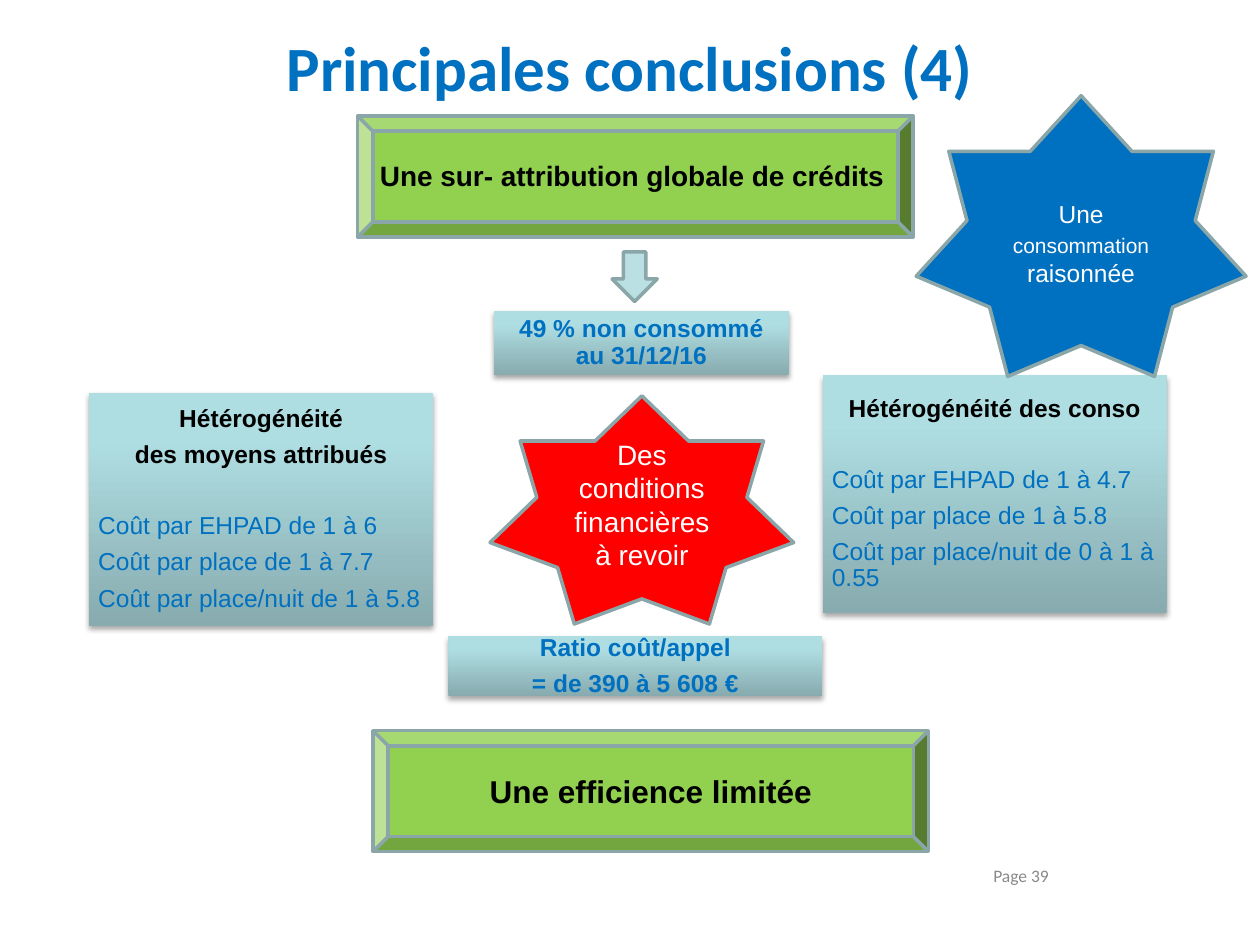
from lxml import etree
from pptx import Presentation
from pptx.dml.color import RGBColor
from pptx.enum.shapes import MSO_SHAPE
from pptx.enum.text import MSO_ANCHOR, PP_ALIGN
from pptx.oxml.ns import qn
from pptx.util import Cm, Pt

BEVEL, STAR = MSO_SHAPE.BEVEL, MSO_SHAPE.STAR_7_POINT
ARROW, RECT = MSO_SHAPE.DOWN_ARROW, MSO_SHAPE.RECTANGLE
LEFT, CENTER, RIGHT = PP_ALIGN.LEFT, PP_ALIGN.CENTER, PP_ALIGN.RIGHT
MIDDLE = MSO_ANCHOR.MIDDLE

COLORS = {
    "blue": "0070C0", "green": "92D050", "red": "FF0000", "teal": "BBE0E3",
    "outline": "8AA6A8", "card_dark": "87ABAE", "card_light": "AFDEE2",
    "black": "000000", "white": "FFFFFF", "grey": "898989",
}


def rgb(name):
    return RGBColor.from_string(COLORS[name])


class SlideBuilder:
    font = "Arial"
    inset = 0.18
    gap = 5.5  # points after each line of a card

    def __init__(self, prs):
        self.slide = prs.slides.add_slide(prs.slide_layouts[5])

    def style(self, p, size, color, bold=False, align=CENTER, font=None):
        p.alignment = align
        f = p.font
        f.name, f.size, f.bold = font or self.font, Pt(size), bold
        f.color.rgb = rgb(color)

    def tighten(self, p, after):
        p.line_spacing = 0.9
        p.space_after = Pt(after)

    def set_insets(self, tf, left=None):
        tf.margin_left = Cm(left or self.inset)
        tf.margin_right = tf.margin_top = tf.margin_bottom = Cm(self.inset)

    def title(self, text, box):
        sp = self.slide.shapes.title
        sp.left, sp.top, sp.width, sp.height = map(Cm, box)
        tf = sp.text_frame
        tf.text = text
        tf.vertical_anchor = MIDDLE
        self.style(tf.paragraphs[0], 36, "blue", True, font="Calibri")

    def shape(self, kind, box, fill, text="", size=16, color="black", bold=False):
        sp = self.slide.shapes.add_shape(kind, *map(Cm, box))
        sp.shadow.inherit = False
        sp.fill.solid()
        sp.fill.fore_color.rgb = rgb(fill)
        sp.line.color.rgb = rgb("outline")
        sp.line.width = Pt(2)
        tf = sp.text_frame
        tf.word_wrap = True
        tf.vertical_anchor = MIDDLE
        if text:
            tf.text = text
            self.style(tf.paragraphs[0], size, color, bold)
        return sp

    def label(self, text, box, size, color, bold=False, align=LEFT, font=None):
        sp = self.slide.shapes.add_textbox(*map(Cm, box))
        tf = sp.text_frame
        tf.word_wrap = True
        tf.text = text
        self.style(tf.paragraphs[0], size, color, bold, align, font)
        return tf

    def card(self, box, heading, details=(), color="black"):
        sp = self.slide.shapes.add_shape(RECT, *map(Cm, box))
        sp.line.fill.background()
        # Vertical gradient, dark at the bottom
        sp.fill.gradient()
        sp.fill.gradient_angle = 90
        stops = zip(sp.fill.gradient_stops, ((0, "card_dark"), (0.8, "card_light")))
        for stop, (position, name) in stops:
            stop.position = position
            stop.color.rgb = rgb(name)
        self.drop_shadow(sp)

        tf = sp.text_frame
        tf.word_wrap = True
        tf.vertical_anchor = MIDDLE
        self.set_insets(tf)
        tf.text = "\n".join([*heading, *details])
        for i, p in enumerate(tf.paragraphs):
            if i < len(heading):
                self.style(p, 14, color, True)
            else:
                self.style(p, 14, "blue", align=LEFT)
            ends_heading = details and i == len(heading) - 1
            self.tighten(p, self.gap + 20 if ends_heading else self.gap)

    def drop_shadow(self, sp):
        sp.shadow.inherit = False
        effects = sp._element.spPr.find(qn("a:effectLst"))
        shadow = etree.SubElement(effects, qn("a:outerShdw"), blurRad=str(Pt(3.1)),
                                  dist=str(Pt(1.8)), dir="5400000", rotWithShape="0")
        clr = etree.SubElement(shadow, qn("a:srgbClr"), val=COLORS["black"])
        etree.SubElement(clr, qn("a:alpha"), val="35000")


def main():
    prs = Presentation()
    prs.slide_width, prs.slide_height = Cm(25.4), Cm(19.05)
    s = SlideBuilder(prs)

    # Title and opening finding
    s.shape(BEVEL, (7.21, 2.34, 11.2, 2.44), "green")
    s.title("Principales conclusions (4)", (1.27, 0.33, 22.86, 2.01))
    tf = s.label("Une sur- attribution globale de crédits",
                 (7.32, 2.77, 11.63, 1.6), 16, "black", True)
    tf.vertical_anchor = MIDDLE
    s.set_insets(tf, left=0.34)
    s.tighten(tf.paragraphs[0], s.gap)

    # Unused credits
    s.card((9.96, 6.27, 5.94, 1.29), ["49 % non consommé au 31/12/16"], color="blue")
    s.shape(ARROW, (12.34, 5.08, 0.91, 1), "teal")

    # Cost comparisons
    s.card((16.59, 7.57, 6.93, 4.78), ["Hétérogénéité des conso"],
           ["Coût par EHPAD de 1 à 4.7", "Coût par place de 1 à 5.8",
            "Coût par place/nuit de 0 à 1 à 0.55"])
    s.card((1.8, 7.92, 6.93, 4.7), ["Hétérogénéité", "des moyens attribués"],
           ["Coût par EHPAD de 1 à 6", "Coût par place de 1 à 7.7",
            "Coût par place/nuit de 1 à 5.8"])
    s.card((9.04, 12.83, 7.54, 1.2), ["Ratio coût/appel", "= de 390 à 5 608 €"],
           color="blue")

    # Stars and closing finding
    s.shape(STAR, (9.88, 7.98, 6.12, 4.6), "red",
            "Des conditions financières à revoir", 16, "white")
    s.shape(BEVEL, (7.52, 14.73, 11.2, 2.44), "green",
            "Une efficience limitée", 18, bold=True)
    star = s.shape(STAR, (18.47, 1.93, 6.65, 5.66), "blue", "Une ", 14, "white")
    star.text_frame.margin_top = Cm(0.7)
    p = star.text_frame.paragraphs[0]
    for text, size in (("consommation", 12), (" raisonnée", 14)):
        r = p.add_run()
        r.text = text
        r.font.size = Pt(size)

    # Page number
    s.label("Page 39", (18.49, 17.32, 2.9, 0.74), 10, "grey", align=RIGHT, font="Calibri")

    prs.save("out.pptx")


if __name__ == "__main__":
    main()
